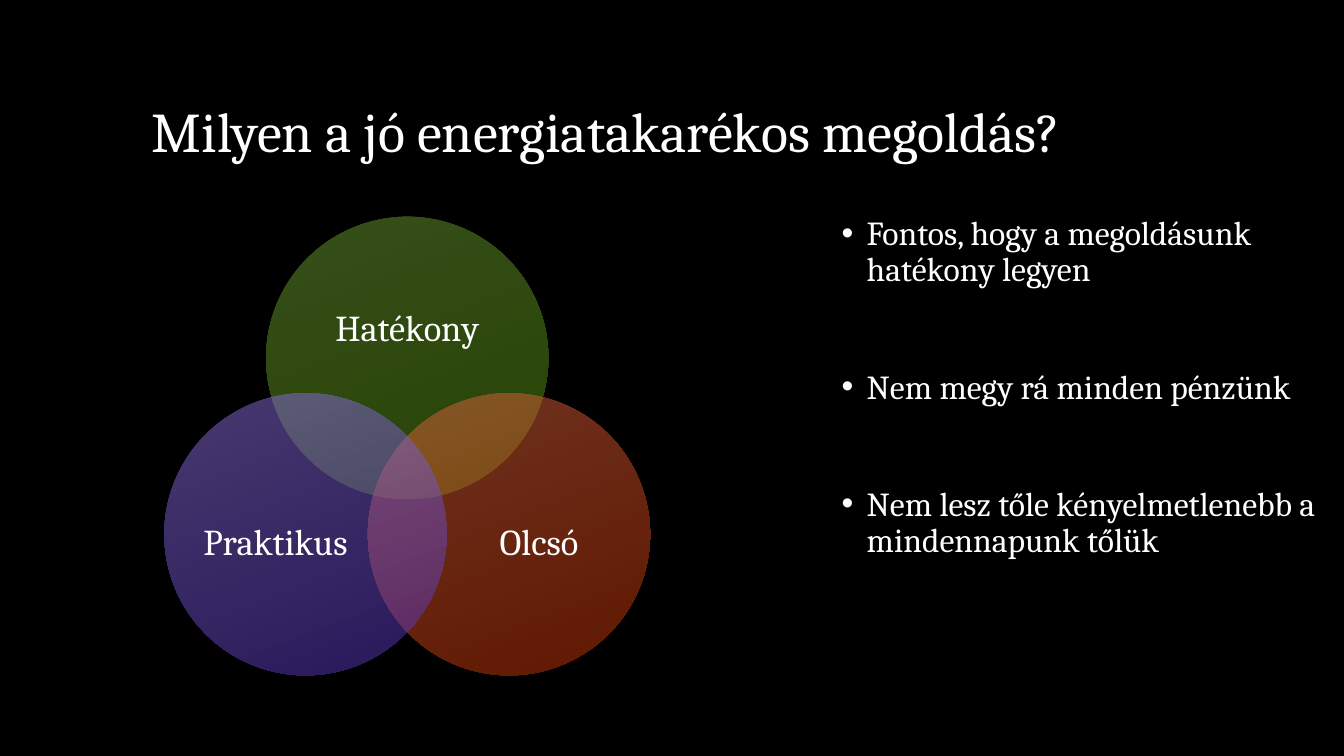
from dataclasses import dataclass

from lxml.etree import SubElement
from pptx import Presentation
from pptx.dml.color import RGBColor
from pptx.enum.shapes import MSO_SHAPE
from pptx.enum.text import MSO_ANCHOR, PP_ALIGN
from pptx.oxml.ns import qn
from pptx.util import Pt

TITLE = "Milyen a jó energiatakarékos megoldás?"
POINTS = [
    "Fontos, hogy a megoldásunk hatékony legyen",
    "Nem megy rá minden pénzünk",
    "Nem lesz tőle kényelmetlenebb a mindennapunk tőlük",
]
CIRCLES = [
    {"name": "Hatékony", "side": 0, "row": 0, "colors": ("6E9D35", "4E8808"), "label": (27, 35.3, 147.6, 90.7)},
    {"name": "Olcsó", "side": 1, "row": 1, "colors": ("DE6742", "C23002"), "label": (61.7, 52.4, 121, 110.9)},
    {"name": "Praktikus", "side": -1, "row": 1, "colors": ("8F73DF", "5331B6"), "label": (18.9, 52.4, 121, 110.9)},
]


@dataclass(frozen=True)
class Theme:
    font: str = "Cambria"
    ground: str = "000000"
    text: str = "FFFFFF"
    title: int = 40
    label: int = 26
    body: int = 24
    alpha: int = 50
    angle: int = 291


THEME = Theme()
SIZE = 201.6
LEFT, TOP = 190.1, 154.8
SHIFT, DROP = 72.7, 126
GAP = 57.7


def add_text(slide, lines, box, size, anchor=MSO_ANCHOR.TOP, align=PP_ALIGN.LEFT,
             spacing=0.9, inset=(7.2, 3.6), bullet=False, gap=0):
    frame = slide.shapes.add_textbox(*map(Pt, box)).text_frame
    frame.word_wrap = True
    frame.vertical_anchor = anchor
    frame.margin_left = frame.margin_right = Pt(inset[0])
    frame.margin_top = frame.margin_bottom = Pt(inset[1])
    for index, line in enumerate(lines):
        para = frame.paragraphs[0] if index == 0 else frame.add_paragraph()
        para.text = line
        para.alignment = align
        para.line_spacing = spacing
        para.space_before = Pt(gap if index else 0)
        if bullet:
            props = para._p.get_or_add_pPr()
            props.set("marL", str(Pt(18)))
            props.set("indent", str(-Pt(18)))
            SubElement(props, qn("a:buFont")).set("typeface", "Arial")
            SubElement(props, qn("a:buChar")).set("char", "•")
        font = para.runs[0].font
        font.name = THEME.font
        font.size = Pt(size)
        font.color.rgb = RGBColor.from_string(THEME.text)


def add_circle(slide, left, top, colors):
    shape = slide.shapes.add_shape(MSO_SHAPE.OVAL, Pt(left), Pt(top), Pt(SIZE), Pt(SIZE))
    shape.shadow.inherit = False
    shape.line.fill.background()
    shape.fill.gradient()
    shape.fill.gradient_angle = THEME.angle
    for stop, color in zip(shape.fill.gradient_stops, colors):
        stop.color.rgb = RGBColor.from_string(color)
    for tone in shape.element.spPr.findall(".//" + qn("a:srgbClr")):
        SubElement(tone, qn("a:alpha")).set("val", str(THEME.alpha * 1000))


def main():
    deck = Presentation()
    deck.slide_width, deck.slide_height = Pt(960), Pt(540)
    slide = deck.slides.add_slide(deck.slide_layouts[6])
    slide.background.fill.solid()
    slide.background.fill.fore_color.rgb = RGBColor.from_string(THEME.ground)

    add_text(slide, [TITLE], (101.5, 30.2, 756, 90), THEME.title,
             anchor=MSO_ANCHOR.BOTTOM, spacing=0.8)
    for circle in CIRCLES:
        left = LEFT + circle["side"] * SHIFT
        top = TOP + circle["row"] * DROP
        add_circle(slide, left, top, circle["colors"])
        dx, dy, width, height = circle["label"]
        add_text(slide, [circle["name"]], (left + dx, top + dy, width, height), THEME.label,
                 anchor=MSO_ANCHOR.MIDDLE, align=PP_ALIGN.CENTER, inset=(0, 0))
    add_text(slide, POINTS, (594, 151.2, 365.8, 342), THEME.body, bullet=True, gap=GAP)
    deck.save("out.pptx")


if __name__ == "__main__":
    main()
